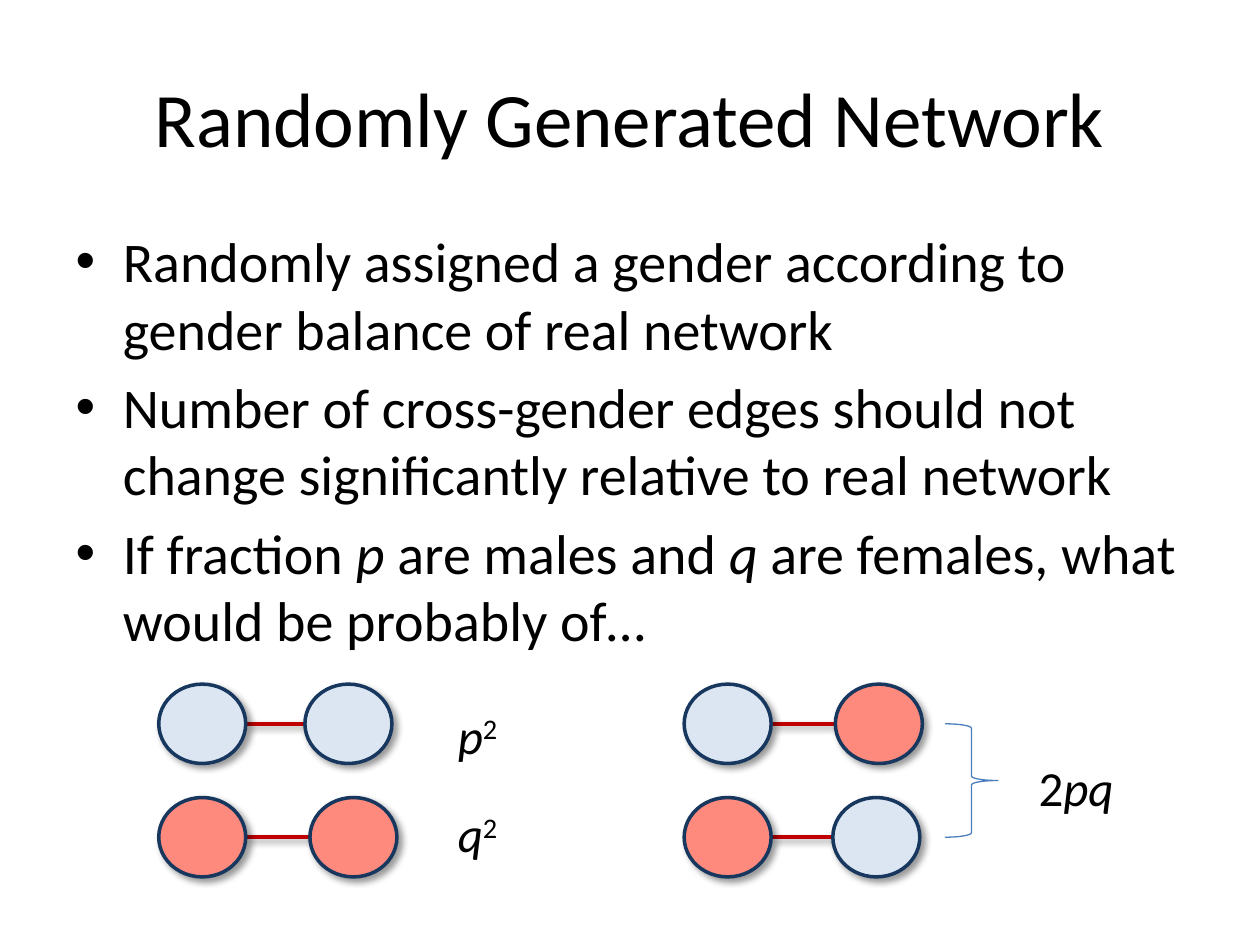
from lxml import etree
from pptx import Presentation
from pptx.dml.color import RGBColor
from pptx.enum.shapes import MSO_CONNECTOR, MSO_SHAPE
from pptx.enum.text import MSO_ANCHOR, MSO_AUTO_SIZE, PP_ALIGN
from pptx.oxml.ns import qn
from pptx.util import Inches, Pt

OVAL, BRACE = MSO_SHAPE.OVAL, MSO_SHAPE.RIGHT_BRACE
LINE = MSO_CONNECTOR.STRAIGHT
CENTER, LEFT = PP_ALIGN.CENTER, PP_ALIGN.LEFT
TOP, MIDDLE = MSO_ANCHOR.TOP, MSO_ANCHOR.MIDDLE
NOFIT = MSO_AUTO_SIZE.NONE

# Content: runs are (text, style), with i = italic and s = superscript
TITLE = [[("Randomly Generated Network", "")]]
POINTS = [
    [("Randomly assigned a gender according to gender balance of real network", "")],
    [("Number of cross-gender edges should not change significantly "
      "relative to real network", "")],
    [("If fraction ", ""), ("p", "i"), (" are males and ", ""), ("q", "i"),
     (" are females, what would be probably of…", "")],
]
MALE, FEMALE = "DCE6F2", "FE8A7E"
COLS, ROWS = (1.26, 5.43), (5.43, 6.33)
# Column, row, left fill, right fill, step between nodes
PAIRS = [
    (0, 0, MALE, MALE, 1.16),
    (0, 1, FEMALE, FEMALE, 1.2),
    (1, 0, MALE, FEMALE, 1.2),
    (1, 1, FEMALE, MALE, 1.18),
]
LABELS = [
    (3.33, 5.55, [("p", "i"), ("2", "s")]),
    (3.33, 6.33, [("q", "i"), ("2", "s")]),
    (8.08, 5.96, [("2", ""), ("pq", "i")]),
]
NODE_W, NODE_H = 0.69, 0.63


def color(code):
    return RGBColor.from_string(code)


def place(shape, *box):
    shape.left, shape.top, shape.width, shape.height = map(Inches, box)


def write(shape, paras, size=28, align=CENTER, anchor=TOP):
    frame = shape.text_frame
    frame.word_wrap, frame.auto_size = True, NOFIT
    frame.vertical_anchor = anchor
    for n, runs in enumerate(paras):
        para = frame.add_paragraph() if n else frame.paragraphs[0]
        para.alignment = align
        for text, style in runs:
            run = para.add_run()
            run.text = text
            font = run.font
            font.name, font.size = "Calibri", Pt(size)
            font.color.rgb = color("000000")
            font.italic = style == "i"
            if style == "s":
                run._r.get_or_add_rPr().set("baseline", "30000")


def stroke(shape, code, width):
    shape.line.color.rgb = color(code)
    shape.line.width = Pt(width)


def shade(shape):
    """Add a soft shadow, down and to the right."""
    effects = etree.SubElement(shape._element.spPr, qn("a:effectLst"))
    outer = etree.SubElement(effects, qn("a:outerShdw"), blurRad=str(Pt(4)),
                             dist=str(Pt(3)), dir="2700000", rotWithShape="0")
    black = etree.SubElement(outer, qn("a:srgbClr"), val="000000")
    etree.SubElement(black, qn("a:alpha"), val="40000")


def pair(shapes, left, top, fills, step):
    """Draw two nodes joined by an edge."""
    group = shapes.add_group_shape().shapes
    mid = top + NODE_H / 2
    edge = group.add_connector(LINE, Inches(left + step), Inches(mid),
                               Inches(left + NODE_W), Inches(mid))
    stroke(edge, "C00000", 2)
    shade(edge)
    for n, fill in enumerate(fills):
        node = group.add_shape(OVAL, Inches(left + n * step), Inches(top),
                               Inches(NODE_W), Inches(NODE_H))
        node.fill.solid()
        node.fill.fore_color.rgb = color(fill)
        stroke(node, "17375E", 2)
        shade(node)


def main():
    deck = Presentation()
    deck.slide_width, deck.slide_height = Inches(10), Inches(7.5)
    slide = deck.slides.add_slide(deck.slide_layouts[1])
    shapes = slide.shapes

    # Title and bullets
    title, body = slide.placeholders
    place(title, 0.5, 0.3, 9, 1.25)
    write(title, TITLE, size=44, anchor=MIDDLE)
    place(body, 0.5, 1.75, 9, 3.5)
    write(body, POINTS, size=32, align=LEFT)

    # Node pairs
    for col, row, first, second, step in PAIRS:
        pair(shapes, COLS[col], ROWS[row], (first, second), step)

    # Probabilities
    for left, top, runs in LABELS:
        box = shapes.add_textbox(0, 0, 0, 0)
        place(box, left, top, 0.92, 0.57)
        write(box, [runs])

    # Brace joining the mixed pairs
    brace = shapes.add_shape(BRACE, 0, 0, 0, 0)
    place(brace, 7.5, ROWS[0] + NODE_H / 2, 0.42, ROWS[1] - ROWS[0])
    brace.fill.background()
    stroke(brace, "4B7EBC", 0.75)
    brace.shadow.inherit = False

    deck.save("out.pptx")


if __name__ == "__main__":
    main()
